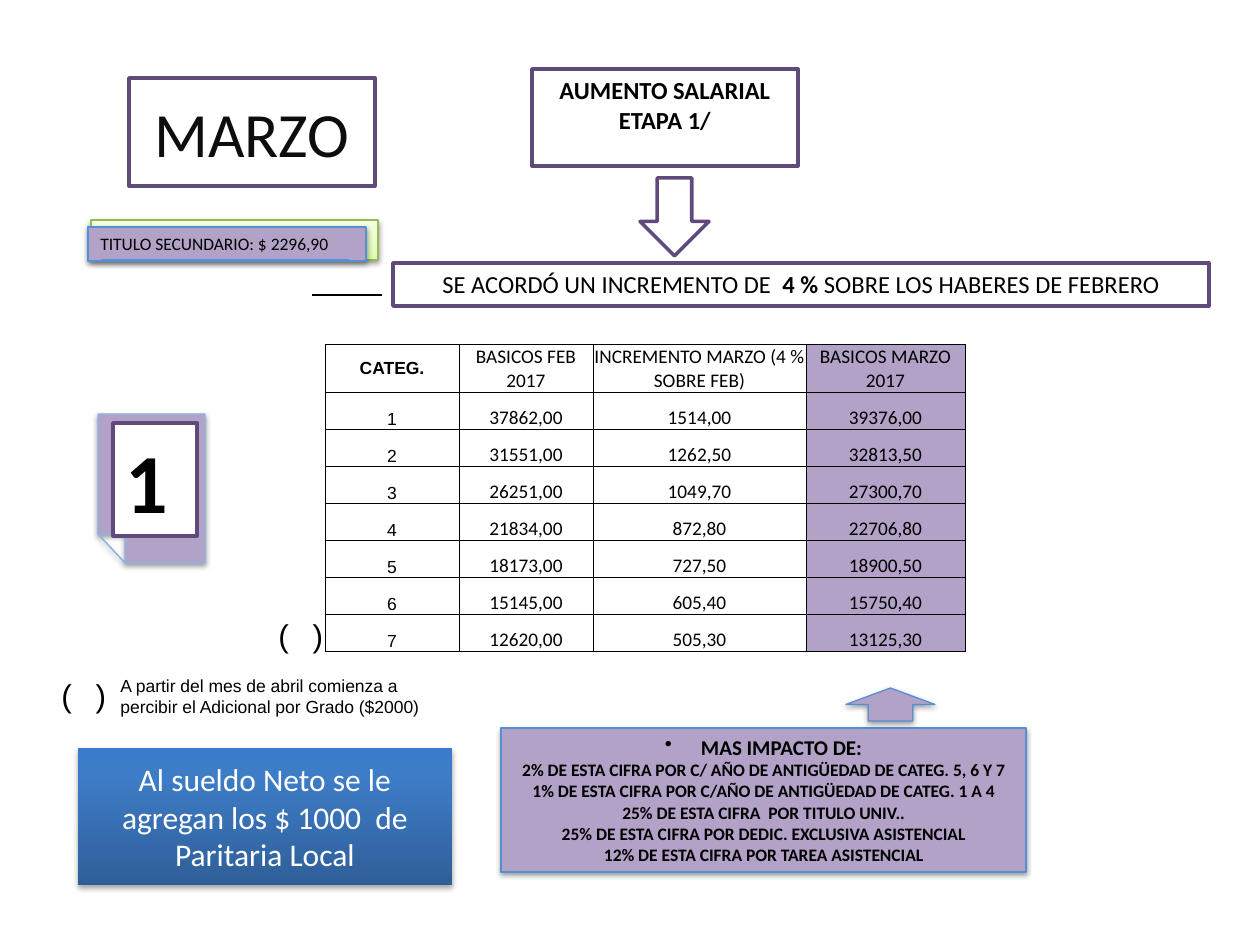
from dataclasses import dataclass
from typing import Any, Optional

from lxml.etree import SubElement
from pptx import Presentation
from pptx.dml.color import RGBColor
from pptx.enum.shapes import MSO_CONNECTOR, MSO_SHAPE
from pptx.enum.text import MSO_ANCHOR, MSO_AUTO_SIZE, PP_ALIGN
from pptx.oxml.ns import qn
from pptx.util import Emu, Pt

SCALE = 914400 / 126
LEFT, MID = PP_ALIGN.LEFT, PP_ALIGN.CENTER
RECT = MSO_SHAPE.RECTANGLE


@dataclass(frozen=True)
class Theme:
    black: str = "000000"
    white: str = "FFFFFF"
    ink: str = "0D0D0D"
    plum: str = "604A7B"
    lilac: str = "B3A2C7"
    blue: str = "558ED5"
    sky: str = "8EB4E3"
    green: str = "98B955"
    lime: tuple = ((0, "DAFDA7"), (35, "E4FCC2"), (100, "F5FFE7"))
    navy: tuple = ((0, "2F5F99"), (80, "3D7CC7"), (100, "3A7CCB"))
    sans: str = "Calibri"
    plain: str = "Arial"
    huge: int = 48
    title: int = 36
    large: int = 18
    head: int = 14
    sub: int = 12
    cell: int = 11
    small: int = 10
    thick: float = 2
    thin: float = 0.75


T = Theme()


@dataclass(frozen=True)
class Para:
    """Text in runs; with several runs, every second one is bold."""
    texts: tuple
    size: int
    bold: bool = False
    face: str = T.sans
    color: str = T.black
    align: Any = MID
    bullet: bool = False


@dataclass(frozen=True)
class Look:
    fill: Any = None
    line: Optional[str] = None
    width: float = T.thin
    shade: int = 0
    drop: int = 20000


@dataclass(frozen=True)
class Box:
    at: tuple
    look: Look
    paras: tuple = ()
    kind: Any = RECT
    anchor: Any = MSO_ANCHOR.TOP


FRAME = Look(T.white, T.plum, T.thick)
CARD = Look(T.lilac, T.blue, shade=38)
NOTE = Look()


def px(num: float) -> Emu:
    return Emu(round(num * SCALE))


def rgb(code: str) -> RGBColor:
    return RGBColor.from_string(code)


def tint(node: Any, code: str) -> Any:
    return SubElement(node, qn("a:srgbClr"), val=code)


def blend(shape: Any, stops: tuple) -> None:
    """Fill from bottom to top with the given stops."""
    shape.fill.gradient()
    shape.fill.gradient_angle = 90
    stop_list = shape._element.spPr.find(".//" + qn("a:gsLst"))
    for old in list(stop_list):
        stop_list.remove(old)
    for pos, code in stops:
        tint(SubElement(stop_list, qn("a:gs"), pos=str(pos * 1000)), code)


def paint(shape: Any, look: Look) -> None:
    if isinstance(look.fill, tuple):
        blend(shape, look.fill)
    elif look.fill:
        shape.fill.solid()
        shape.fill.fore_color.rgb = rgb(look.fill)
    else:
        shape.fill.background()
    if look.line:
        shape.line.color.rgb = rgb(look.line)
        shape.line.width = Pt(look.width)
    else:
        shape.line.fill.background()
    shape.shadow.inherit = False
    if look.shade:
        glow = SubElement(shape._element.spPr.find(qn("a:effectLst")), qn("a:outerShdw"),
                          blurRad="40000", dist=str(look.drop), dir="5400000", rotWithShape="0")
        SubElement(tint(glow, T.black), qn("a:alpha"), val=str(look.shade * 1000))


def write(frame: Any, paras: tuple) -> None:
    for num, para in enumerate(paras):
        line = frame.add_paragraph() if num else frame.paragraphs[0]
        line.alignment = para.align
        font = line.font
        font.name, font.size, font.bold = para.face, Pt(para.size), para.bold
        font.color.rgb = rgb(para.color)
        for idx, text in enumerate(para.texts):
            run = line.add_run()
            run.text = text
            if idx % 2:
                run.font.bold = True
        if para.bullet:
            props = line._p.get_or_add_pPr()
            props.set("marL", "228600")
            props.set("indent", "-228600")
            mark = SubElement(props, qn("a:buChar"), char="•")
            props.find(qn("a:defRPr")).addprevious(mark)


def dress(shape: Any, box: Box) -> None:
    paint(shape, box.look)
    frame = shape.text_frame
    frame.word_wrap = True
    frame.auto_size = MSO_AUTO_SIZE.NONE
    frame.vertical_anchor = box.anchor
    write(frame, box.paras)


def draw_box(shapes: Any, box: Box) -> None:
    place = map(px, box.at)
    shape = shapes.add_textbox(*place) if box.look is NOTE else shapes.add_shape(box.kind, *place)
    dress(shape, box)


def draw_title(shape: Any, box: Box) -> None:
    shape.left, shape.top, shape.width, shape.height = map(px, box.at)
    form = SubElement(shape._element.spPr, qn("a:prstGeom"), prst="roundRect")
    SubElement(form, qn("a:avLst"))
    dress(shape, box)


def draw_line(shapes: Any, ends: tuple, color: str) -> None:
    line = shapes.add_connector(MSO_CONNECTOR.STRAIGHT, *map(px, ends))
    line.line.color.rgb = rgb(color)
    line.line.width = Pt(T.thin)
    SubElement(line._element.spPr, qn("a:effectLst"))


def draw_sheet(shapes: Any) -> None:
    """Draw the sheet with its lower left corner folded."""
    left, top, right, base, fold_x, fold_y = 98, 414, 205, 563, 125, 534
    pen = shapes.build_freeform(left, fold_y, scale=SCALE)
    pen.add_line_segments([(left, top), (right, top), (right, base), (fold_x, base)])
    pen.move_to(left, fold_y)
    pen.add_line_segments([(fold_x, fold_y), (fold_x, base)])
    paint(pen.convert_to_shape(), Look(T.lilac, T.sky, shade=38))


def draw_table(shapes: Any, rows: list) -> None:
    cols, tall = (134, 134, 213, 159), [48] + [37] * (len(rows) - 1)
    table = shapes.add_table(len(rows), len(cols), px(325), px(344),
                             px(sum(cols)), px(sum(tall))).table
    table.first_row = table.horz_banding = False
    for col, wide in zip(table.columns, cols):
        col.width = px(wide)
    for num, (row, high) in enumerate(zip(table.rows, tall)):
        row.height = px(high)
        for idx, cell in enumerate(row.cells):
            cell.margin_left = cell.margin_right = cell.margin_top = px(1)
            cell.margin_bottom = 0
            corner = num == idx == 0
            cell.vertical_anchor = MSO_ANCHOR.MIDDLE if corner else MSO_ANCHOR.BOTTOM
            size, face = (T.cell, T.sans) if idx else (T.small, T.plain)
            write(cell.text_frame, (Para((rows[num][idx],), size, corner, face),))
            props = cell._tc.get_or_add_tcPr()
            for side in ("a:lnL", "a:lnR", "a:lnT", "a:lnB"):
                edge = SubElement(props, qn(side), w=str(Pt(0.5)))
                tint(SubElement(edge, qn("a:solidFill")), T.black)
            if idx == len(cols) - 1:
                cell.fill.solid()
                cell.fill.fore_color.rgb = rgb(T.lilac)
            else:
                cell.fill.background()


HEAD = ("CATEG.", "BASICOS FEB 2017", "INCREMENTO MARZO (4 % SOBRE FEB)", "BASICOS MARZO 2017")
PAY = (("37862,00", "1514,00", "39376,00"), ("31551,00", "1262,50", "32813,50"),
       ("26251,00", "1049,70", "27300,70"), ("21834,00", "872,80", "22706,80"),
       ("18173,00", "727,50", "18900,50"), ("15145,00", "605,40", "15750,40"),
       ("12620,00", "505,30", "13125,30"))
IMPACT = ("2% DE ESTA CIFRA POR C/ AÑO DE ANTIGÜEDAD DE CATEG. 5, 6 Y 7",
          "1% DE ESTA CIFRA POR C/AÑO DE ANTIGÜEDAD DE CATEG. 1 A 4",
          "25% DE ESTA CIFRA  POR TITULO UNIV..",
          "25% DE ESTA CIFRA POR DEDIC. EXCLUSIVA ASISTENCIAL",
          "12% DE ESTA CIFRA POR TAREA ASISTENCIAL")
TITLE = Box((129, 78, 246, 108), Look(None, T.plum, T.thick),
            (Para(("MARZO",), T.title, color=T.ink),), anchor=MSO_ANCHOR.MIDDLE)
BACK = (
    Box((91, 220, 287, 40), Look(T.lime, T.green, shade=38)),
    Box((532, 69, 266, 97), FRAME,
        tuple(Para((text,), T.head, True) for text in ("AUMENTO SALARIAL", "ETAPA 1/"))),
    Box((640, 178, 69, 78), FRAME, kind=MSO_SHAPE.DOWN_ARROW),
    Box((393, 263, 816, 43), FRAME, (Para(("SE ACORDÓ UN INCREMENTO DE  ", "4 % ",
                                           "SOBRE LOS HABERES DE FEBRERO"), T.head),)),
    Box((501, 728, 525, 144), CARD, (Para((" MAS IMPACTO DE:",), T.sub, True, bullet=True),
                                     *(Para((text,), T.small, True) for text in IMPACT))),
    Box((846, 688, 89, 33), CARD, kind=MSO_SHAPE.UP_ARROW),
    Box((88, 227, 278, 34), CARD, (Para(("TITULO SECUNDARIO: $ 2296,90",), T.small, align=LEFT),)),
)
STAGE = Box((113, 423, 84, 113), FRAME, (Para(("1",), T.huge, True, align=LEFT),))
FRONT = (
    Box((108, 669, 344, 55), NOTE,
        (Para(("A partir del mes de abril comienza a percibir el Adicional por Grado ($2000)",),
              T.small, face=T.plain, align=LEFT),)),
    *(Box((x + step, y, wide, 50), NOTE, (Para((sign,), T.large, face=T.plain, align=LEFT),))
      for x, y in ((266, 610), (49, 670)) for step, wide, sign in ((0, 39, "("), (39, 20, ")"))),
    Box((78, 748, 374, 137), Look(T.navy, shade=35, drop=23000),
        (Para(("Al sueldo Neto se le agregan los $ 1000  de Paritaria Local",), T.large,
              color=T.white),), anchor=MSO_ANCHOR.MIDDLE),
)


def main() -> None:
    deck = Presentation()
    deck.slide_width, deck.slide_height = px(1260), px(945)
    shapes = deck.slides.add_slide(deck.slide_layouts[5]).shapes
    draw_title(shapes.title, TITLE)
    for box in BACK:
        draw_box(shapes, box)
    draw_line(shapes, (312, 295, 382, 295), T.black)
    draw_line(shapes, (101, 260, 349, 260), T.blue)
    draw_sheet(shapes)
    draw_box(shapes, STAGE)
    draw_table(shapes, [HEAD] + [(str(num), *row) for num, row in enumerate(PAY, 1)])
    for box in FRONT:
        draw_box(shapes, box)
    deck.save("out.pptx")


if __name__ == "__main__":
    main()
